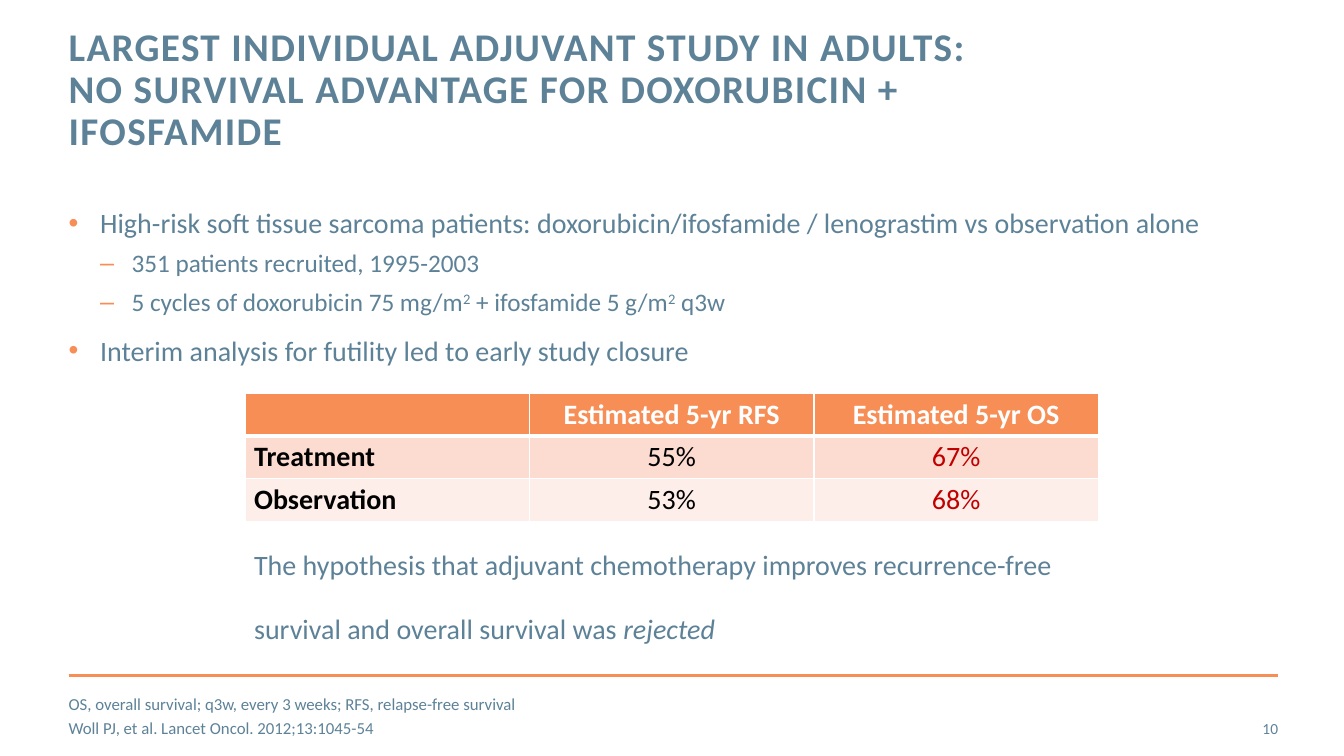
import pptx
import pptx.util
import pptx.dml.color
import pptx.enum.shapes
import pptx.enum.text
import pptx.oxml.ns
import lxml.etree

Pt = pptx.util.Pt
RGBColor = pptx.dml.color.RGBColor
ALIGN = pptx.enum.text.PP_ALIGN
ANCHOR = pptx.enum.text.MSO_ANCHOR
qn = pptx.oxml.ns.qn

SLATE = RGBColor(0x5D, 0x82, 0x98)
ORANGE = RGBColor(0xF7, 0x8E, 0x56)
ROSE = RGBColor(0xFC, 0xDB, 0xD1)
BLUSH = RGBColor(0xFD, 0xEE, 0xE9)
RED = RGBColor(0xC0, 0x00, 0x00)
BLACK = RGBColor(0, 0, 0)
WHITE = RGBColor(255, 255, 255)

LEFT = 49
POINTS = [
    (0, "High-risk soft tissue sarcoma patients: doxorubicin/ifosfamide / "
        "lenograstim vs observation alone"),
    (1, "351 patients recruited, 1995-2003"),
    (1, "5 cycles of doxorubicin 75 mg/m^2^ + ifosfamide 5 g/m^2^ q3w"),
    (0, "Interim analysis for futility led to early study closure"),
]
RATES = [
    ("", "Estimated 5-yr RFS", "Estimated 5-yr OS"),
    ("Treatment", "55%", "67%"),
    ("Observation", "53%", "68%"),
]
NOTES = [
    "OS, overall survival; q3w, every 3 weeks; RFS, relapse-free survival",
    "Woll PJ, et al. Lancet Oncol. 2012;13:1045-54",
]


def style(para, size, color=SLATE, bold=False):
    for run in para.runs:
        run.font.name = "Calibri"
        run.font.size = Pt(size)
        run.font.bold = bold
        run.font.color.rgb = color


def set_frame(frame, inset=(0, 0), anchor=ANCHOR.TOP):
    frame.word_wrap = True
    frame.auto_size = pptx.enum.text.MSO_AUTO_SIZE.NONE
    frame.vertical_anchor = anchor
    frame.margin_left = frame.margin_right = Pt(inset[0])
    frame.margin_top = frame.margin_bottom = Pt(inset[1])


def add_box(slide, box, **look):
    frame = slide.shapes.add_textbox(*map(Pt, box)).text_frame
    set_frame(frame, **look)
    return frame


def add_title(slide, box):
    title = slide.shapes.title
    title.left, title.top, title.width, title.height = map(Pt, box)
    frame = title.text_frame
    set_frame(frame)
    frame.text = ("LARGEST INDIVIDUAL ADJUVANT STUDY IN ADULTS: \v"
                  "NO SURVIVAL ADVANTAGE FOR DOXORUBICIN + IFOSFAMIDE")
    para = frame.paragraphs[0]
    para.alignment = ALIGN.LEFT
    para.line_spacing = Pt(30)
    style(para, 28, bold=True)
    for run in para.runs:
        run._r.get_or_add_rPr().set("spc", "100")


def add_bullet(para, level):
    props = para._p.get_or_add_pPr()
    props.set("marL", str(Pt(22.5 * (level + 1))))
    props.set("indent", str(-Pt(22.5)))
    tint = lxml.etree.SubElement(props, qn("a:buClr"))
    lxml.etree.SubElement(tint, qn("a:srgbClr")).set("val", str(ORANGE))
    lxml.etree.SubElement(props, qn("a:buFont")).set("typeface", "Arial")
    lxml.etree.SubElement(props, qn("a:buChar")).set("char", "•–"[level])


def add_points(slide, box):
    """Bulleted list; text between carets is raised."""
    frame = add_box(slide, box)
    for i, (level, text) in enumerate(POINTS):
        para = frame.add_paragraph() if i else frame.paragraphs[0]
        para.level = level
        add_bullet(para, level)
        if i:
            para.space_before = Pt(6 if level else 12)
        for j, part in enumerate(text.split("^")):
            run = para.add_run()
            run.text = part
            if j % 2:
                run._r.get_or_add_rPr().set("baseline", "30000")
        style(para, 18 if level else 20)


def add_edges(cell, row):
    """White borders, with a thick rule under the header row."""
    props = cell._tc.get_or_add_tcPr()
    thick = {0: "B", 1: "T"}.get(row)
    for i, side in enumerate("LRTB"):
        edge = lxml.etree.Element(qn("a:ln" + side))
        edge.set("w", str(Pt(3 if side == thick else 1)))
        fill = lxml.etree.SubElement(edge, qn("a:solidFill"))
        lxml.etree.SubElement(fill, qn("a:srgbClr")).set("val", str(WHITE))
        props.insert(i, edge)


def add_rates(slide, box):
    shape = slide.shapes.add_table(len(RATES), len(RATES[0]), *map(Pt, box))
    for i, row in enumerate(RATES):
        for j, text in enumerate(row):
            cell = shape.table.cell(i, j)
            cell.margin_left = cell.margin_right = Pt(6.5)
            cell.margin_top = cell.margin_bottom = Pt(3)
            cell.fill.solid()
            cell.fill.fore_color.rgb = (ORANGE, ROSE, BLUSH)[i]
            add_edges(cell, i)
            cell.text_frame.text = text
            para = cell.text_frame.paragraphs[0]
            para.alignment = ALIGN.CENTER if j else ALIGN.LEFT
            color = WHITE if i == 0 else RED if j == 2 else BLACK
            style(para, 20, color, bold=i == 0 or j == 0)


def add_verdict(slide, box):
    frame = add_box(slide, box, inset=(6.5, 3.6))
    frame.text = ("The hypothesis that adjuvant chemotherapy improves "
                  "recurrence-free \vsurvival and overall survival was ")
    para = frame.paragraphs[0]
    last = para.add_run()
    last.text = "rejected"
    style(para, 20)
    last.font.italic = True


def add_footer(slide, box):
    left, top, width, height = box
    rule = slide.shapes.add_connector(
        pptx.enum.shapes.MSO_CONNECTOR.STRAIGHT,
        Pt(left), Pt(top), Pt(left + width), Pt(top))
    rule.line.color.rgb = ORANGE
    rule.line.width = Pt(2)
    lxml.etree.SubElement(rule._element.spPr, qn("a:effectLst"))

    notes = add_box(slide, (left, top + 14.4, 640, 28.8),
                    anchor=ANCHOR.MIDDLE)
    notes.text = "\n".join(NOTES)
    for i, para in enumerate(notes.paragraphs):
        style(para, 12)
        if i:
            para.space_before = Pt(3)

    page = add_box(slide, (left + width - 62, top + 23.8, 62, 28.8),
                   anchor=ANCHOR.MIDDLE)
    page.text = "10"
    page.paragraphs[0].alignment = ALIGN.RIGHT
    style(page.paragraphs[0], 11)


def main():
    deck = pptx.Presentation()
    deck.slide_width, deck.slide_height = Pt(960), Pt(540)
    slide = deck.slides.add_slide(deck.slide_layouts[5])
    add_title(slide, (LEFT, 19.5, 737, 63.5))
    add_points(slide, (LEFT, 147, 863, 125))
    add_rates(slide, (175, 281, 609.6, 91.5))
    add_verdict(slide, (175, 387.4, 584, 60.5))
    add_footer(slide, (LEFT, 482.4, 864, 57.6))
    deck.save("out.pptx")


if __name__ == "__main__":
    main()
